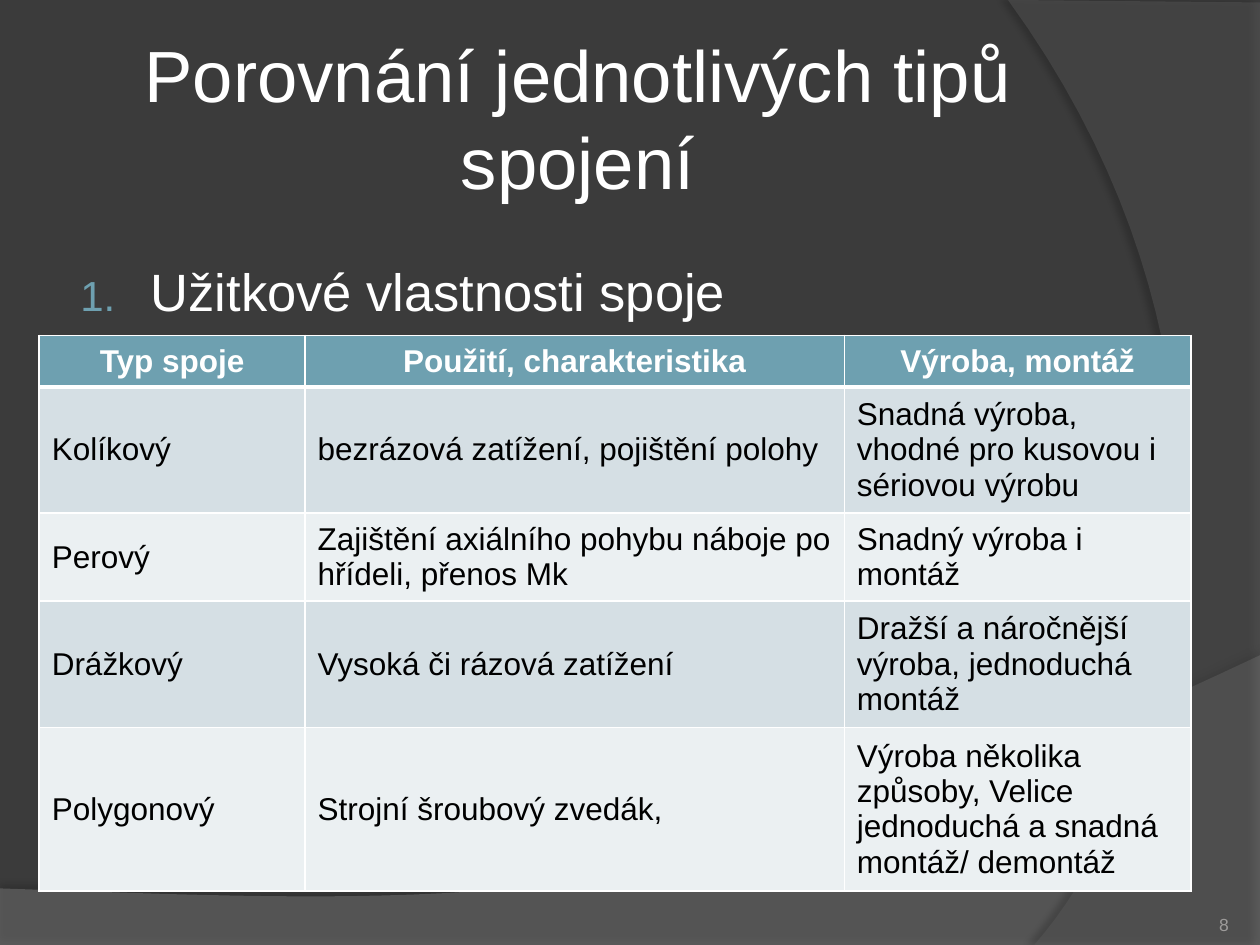
from lxml.etree import SubElement as Sub
from pptx import Presentation
from pptx.dml.color import RGBColor
from pptx.enum.text import MSO_ANCHOR as Anchor, PP_ALIGN as Align
from pptx.oxml.ns import qn
from pptx.util import Cm, Pt

DARK = RGBColor(0x3B, 0x3B, 0x3B)
GREY = RGBColor(0x7F, 0x7F, 0x7F)
SLATE = RGBColor(0x5E, 0x5E, 0x5E)
ASH = RGBColor(0x9D, 0x9B, 0x9A)
WHITE = RGBColor(0xFF, 0xFF, 0xFF)
BLACK = RGBColor(0x00, 0x00, 0x00)
TEAL = RGBColor(0x6E, 0xA0, 0xB0)
BANDS = [RGBColor(0xEB, 0xF0, 0xF2), RGBColor(0xD5, 0xDF, 0xE4)]


def style(par, size, color, align):
    par.alignment = align
    par.font.name = "Arial"
    par.font.size = Pt(size)
    par.font.color.rgb = color


def add_text(text, left, top, width, height, inset, anchor):
    box = slide.shapes.add_textbox(Cm(left), Cm(top), Cm(width), Cm(height))
    frame = box.text_frame
    frame.word_wrap = True
    frame.vertical_anchor = anchor
    frame.margin_left = frame.margin_right = Cm(inset)
    frame.margin_top = frame.margin_bottom = Cm(min(inset, 0.13))
    frame.text = text
    return frame.paragraphs[0]


prs = Presentation()
prs.slide_width, prs.slide_height = Cm(25.4), Cm(19.05)
slide = prs.slides.add_slide(prs.slide_layouts[6])
slide.background.fill.solid()
slide.background.fill.fore_color.rgb = DARK

waves = [
    ([(0, 17.91), (0, 19.05), (25.4, 19.05)],
     [(25.4, 13.21), (14.2, 18.52), (9.93, 18.26), (0, 17.91)],
     GREY, 45, 35, 3.5, 270),
    ([(25.4, 0.05), (25.4, 19.05)],
     [(20.85, 19.05), (23.75, 15.72), (25.86, 7.62), (20.32, 0)],
     SLATE, 40, 45, 4, 180),
]
STEPS = 40
for edge, curve, color, alpha, shade, dist, angle in waves:
    points = list(edge)
    for step in range(STEPS + 1):
        t = step / STEPS
        mix = [(1 - t) ** 3, 3 * t * (1 - t) ** 2, 3 * t * t * (1 - t), t ** 3]
        points.append([sum(m * p[axis] for m, p in zip(mix, curve)) for axis in (0, 1)])
    spots = [(Cm(x), Cm(y)) for x, y in points]
    build = slide.shapes.build_freeform(*spots[0])
    build.add_line_segments(spots[1:], close=True)
    wave = build.convert_to_shape()
    wave.line.fill.background()
    wave.fill.solid()
    wave.fill.fore_color.rgb = color
    tint = wave.fill._xPr.find(qn("a:solidFill"))[0]
    Sub(tint, qn("a:alpha"), val=str(alpha * 1000))
    wave.shadow.inherit = False
    glow = Sub(wave.element.spPr.find(qn("a:effectLst")), qn("a:outerShdw"),
               blurRad=str(Pt(4)), dist=str(Pt(dist)), dir=str(angle * 60000),
               algn="ctr", rotWithShape="0")
    ink = Sub(glow, qn("a:srgbClr"), val=str(BLACK))
    Sub(ink, qn("a:alpha"), val=str(shade * 1000))

title = add_text("Porovnání jednotlivých tipů spojení",
                 1.27, 0.76, 20.75, 3.18, 0.13, Anchor.MIDDLE)
style(title, 41.4, WHITE, Align.CENTER)

item = add_text("Užitkové vlastnosti spoje",
                1.27, 4.45, 20.75, 12.57, 0.25, Anchor.TOP)
props = item._p.get_or_add_pPr()
props.set("marL", str(Cm(1.52)))
props.set("indent", str(Cm(-1.42)))
Sub(Sub(props, qn("a:buClr")), qn("a:srgbClr"), val=str(TEAL))
Sub(props, qn("a:buSzPct"), val="80000")
Sub(props, qn("a:buFont"), typeface="+mj-lt")
Sub(props, qn("a:buAutoNum"), type="arabicPeriod")
item.line_spacing = 1.5
style(item, 30, WHITE, Align.JUSTIFY)

number = add_text("8", 22.66, 17.83, 2.11, 1.02, 0, Anchor.BOTTOM)
style(number, 10, ASH, Align.RIGHT)

rows = [
    ("Typ spoje", "Použití, charakteristika", "Výroba, montáž"),
    ("Kolíkový", "bezrázová zatížení, pojištění polohy",
     "Snadná výroba, vhodné pro kusovou i sériovou výrobu"),
    ("Perový", "Zajištění axiálního pohybu náboje po hřídeli, přenos Mk",
     "Snadný výroba i montáž"),
    ("Drážkový", "Vysoká či rázová zatížení",
     "Dražší a náročnější výroba, jednoduchá montáž"),
    ("Polygonový", "Strojní šroubový zvedák,",
     "Výroba několika způsoby, Velice jednoduchá a snadná montáž/ demontáž"),
]
holder = slide.shapes.add_table(5, 3, Cm(0.79), Cm(6.76), Cm(23.22), Cm(5.2))
holder.height = Cm(11.2)
table = holder.table
for col, width in zip(table.columns, (5.36, 10.87, 6.99)):
    col.width = Cm(width)
for r, row in enumerate(rows):
    head = r == 0
    for c, text in enumerate(row):
        cell = table.cell(r, c)
        cell.text = text
        cell.vertical_anchor = Anchor.MIDDLE
        par = cell.text_frame.paragraphs[0]
        style(par, 18, WHITE if head else BLACK, Align.CENTER if head else Align.LEFT)
        par.font.bold = head
        for side in "LRTB":
            thick = (head and side == "B") or (r == 1 and side == "T")
            line = Sub(cell._tc.get_or_add_tcPr(), qn("a:ln" + side),
                       w=str(Pt(3 if thick else 1)))
            Sub(Sub(line, qn("a:solidFill")), qn("a:srgbClr"), val=str(WHITE))
        cell.fill.solid()
        cell.fill.fore_color.rgb = TEAL if head else BANDS[r % 2]

prs.save("out.pptx")
